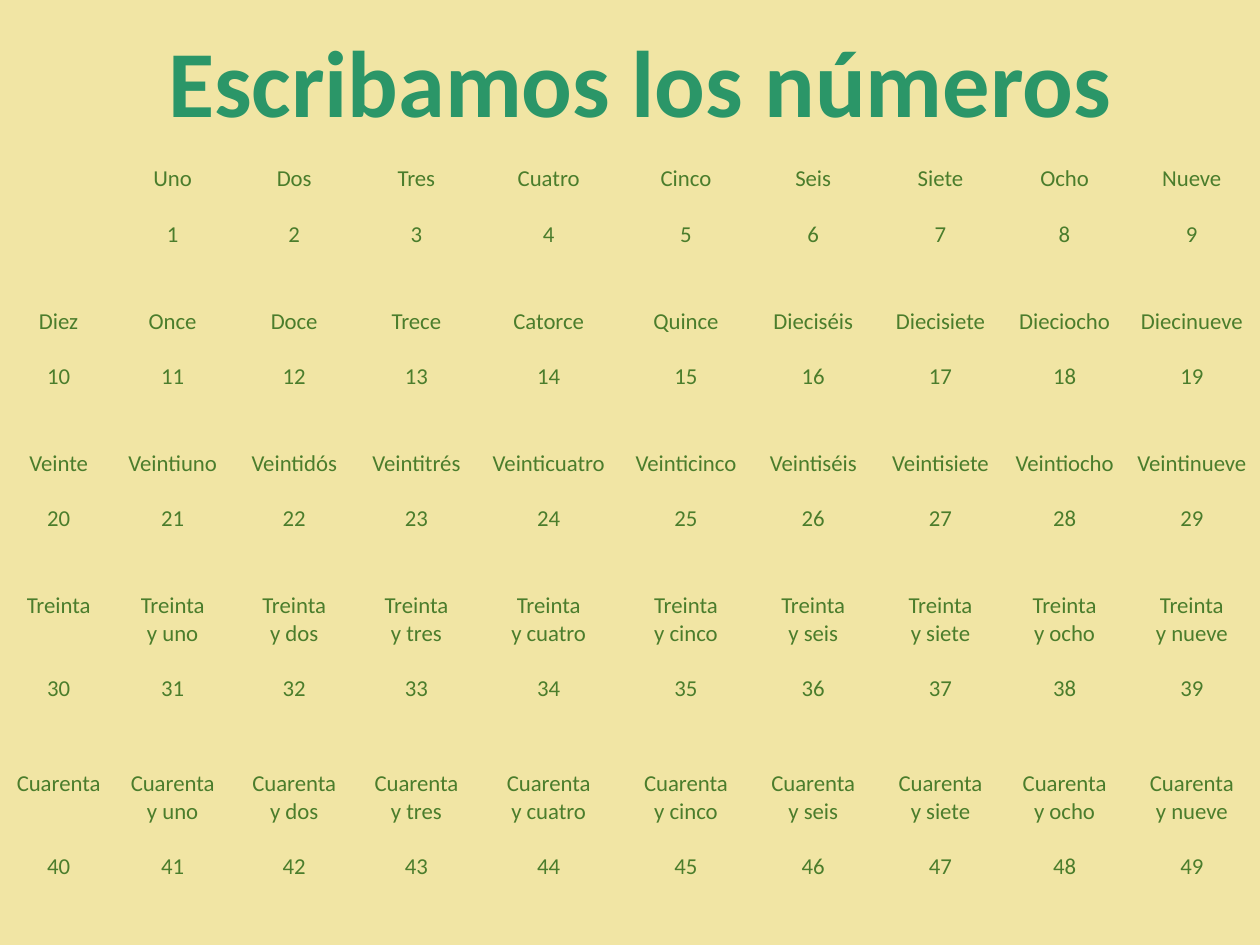
import pptx
import pptx.dml.color
import pptx.enum.text
import pptx.oxml.ns
import pptx.util

Inches = pptx.util.Inches
Pt = pptx.util.Pt

FONT = "Calibri"
BACKGROUND = "F1E5A4"
TITLE_COLOR = "2B9668"
NUMBER_COLOR = "4B7D2C"
NUMBER_SIZE = 13
LINE_HEIGHT = 15.85
NO_STYLE_NO_GRID = "{2D5ABB26-0587-4C30-8999-92F81FD0307C}"

COLUMN_WIDTHS = [0.89, 0.92, 1.01, 0.93, 1.17, 1.01, 1.01, 1.01, 0.96, 1.06]
ROW_HEIGHTS = [1.13, 1.13, 1.13, 1.41, 1.41]
UNITS = ["uno", "dos", "tres", "cuatro", "cinco", "seis", "siete", "ocho", "nueve"]
NUMBER_ROWS = [
    [""] + [unit.capitalize() for unit in UNITS],
    ["Diez", "Once", "Doce", "Trece", "Catorce", "Quince",
     "Dieciséis", "Diecisiete", "Dieciocho", "Diecinueve"],
    ["Veinte", "Veintiuno", "Veintidós", "Veintitrés", "Veinticuatro", "Veinticinco",
     "Veintiséis", "Veintisiete", "Veintiocho", "Veintinueve"],
] + [[ten] + [f"{ten}\ny {unit}" for unit in UNITS] for ten in ("Treinta", "Cuarenta")]


def color(hex_string):
    """Return the colour for a hex string."""
    return pptx.dml.color.RGBColor.from_string(hex_string)


def format_text(text_frame, size, hex_string, bold=False):
    """Centre all paragraphs and format their runs."""
    for paragraph in text_frame.paragraphs:
        paragraph.alignment = pptx.enum.text.PP_ALIGN.CENTER
        for run in paragraph.runs:
            run.font.name = FONT
            run.font.size = Pt(size)
            run.font.bold = bold
            run.font.color.rgb = color(hex_string)


def set_title(slide, text):
    """Fill and place the title placeholder."""
    title = slide.shapes.title
    title.left, title.top = Inches(0.51), Inches(0.13)
    title.width, title.height = Inches(9.14), Inches(1.01)
    title.text_frame.text = text
    title.text_frame.auto_size = pptx.enum.text.MSO_AUTO_SIZE.SHAPE_TO_FIT_TEXT
    format_text(title.text_frame, 54, TITLE_COLOR, bold=True)


def fill_cell(cell, words, number, word_lines):
    """Write a number in words with its figure spaced below."""
    cell.fill.background()
    cell.margin_left = cell.margin_right = Inches(0.05)
    cell.margin_top = cell.margin_bottom = 0
    if not words:
        return
    cell.text_frame.text = f"{words}\n{number}"
    missing_lines = word_lines - len(words.split("\n"))
    figure = cell.text_frame.paragraphs[-1]
    figure.space_before = Pt(LINE_HEIGHT * (1 + missing_lines))
    format_text(cell.text_frame, NUMBER_SIZE, NUMBER_COLOR)


def add_number_table(slide):
    """Add the plain table of numbers, ten to a row."""
    frame = slide.shapes.add_table(
        len(ROW_HEIGHTS), len(COLUMN_WIDTHS), Inches(0.02), Inches(1.31),
        Inches(sum(COLUMN_WIDTHS)), Inches(sum(ROW_HEIGHTS)))
    style = frame.element.find(".//" + pptx.oxml.ns.qn("a:tableStyleId"))
    style.text = NO_STYLE_NO_GRID
    table = frame.table
    table.first_row = table.horz_banding = False
    for column, width in zip(table.columns, COLUMN_WIDTHS):
        column.width = Inches(width)
    for row_index, names in enumerate(NUMBER_ROWS):
        table.rows[row_index].height = Inches(ROW_HEIGHTS[row_index])
        word_lines = max(len(words.split("\n")) for words in names)
        for column_index, words in enumerate(names):
            fill_cell(table.cell(row_index, column_index), words,
                      10 * row_index + column_index, word_lines)


def main():
    """Build and save the slide."""
    presentation = pptx.Presentation()
    presentation.slide_width, presentation.slide_height = Inches(10), Inches(7.5)
    slide = presentation.slides.add_slide(presentation.slide_layouts[5])
    slide.background.fill.solid()
    slide.background.fill.fore_color.rgb = color(BACKGROUND)
    set_title(slide, "Escribamos los números")
    add_number_table(slide)
    presentation.save("out.pptx")


if __name__ == "__main__":
    main()
